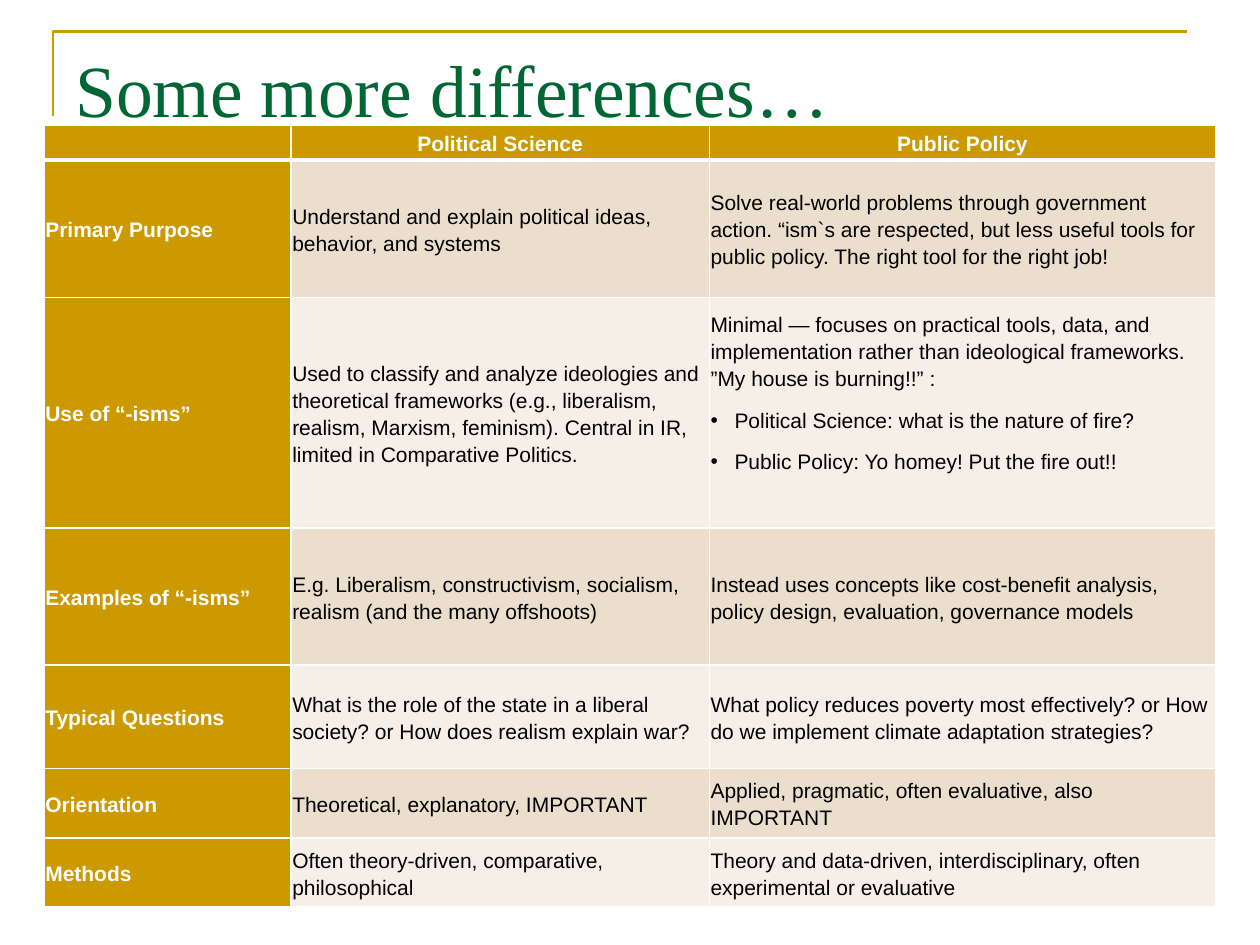
from lxml.etree import SubElement
from pptx import Presentation
from pptx.dml.color import RGBColor
from pptx.enum.text import MSO_ANCHOR, PP_ALIGN
from pptx.oxml.ns import qn
from pptx.util import Inches, Pt

GOLD = RGBColor(0xCC, 0x99, 0x00)
GREEN = RGBColor(0x00, 0x66, 0x33)
SAND = RGBColor(0xEC, 0xDE, 0xCC)
CREAM = RGBColor(0xF6, 0xEF, 0xE7)
WHITE = RGBColor(0xFF, 0xFF, 0xFF)
BLACK = RGBColor(0x00, 0x00, 0x00)

COLS = [1.96, 3.32, 4.02]
ROWS = [0.28, 1.09, 1.83, 1.09, 0.82, 0.55, 0.55]
PAD = 0.01
BULLET = "• "
DATA = [
    ["", "Political Science", "Public Policy"],
    ["Primary Purpose",
     "Understand and explain political ideas, behavior, and systems",
     "Solve real-world problems through government action. “ism`s are respected, "
     "but less useful tools for public policy. The right tool for the right job!"],
    ["Use of “-isms”",
     "Used to classify and analyze ideologies and theoretical frameworks "
     "(e.g., liberalism, realism, Marxism, feminism). Central in IR, "
     "limited in Comparative Politics.",
     "Minimal — focuses on practical tools, data, and implementation rather than "
     "ideological frameworks. ”My house is burning!!” :\n"
     "• Political Science: what is the nature of fire?\n"
     "• Public Policy: Yo homey! Put the fire out!!"],
    ["Examples of “-isms”",
     "E.g. Liberalism, constructivism, socialism, realism (and the many offshoots)",
     "Instead uses concepts like cost-benefit analysis, policy design, evaluation, "
     "governance models"],
    ["Typical Questions",
     "What is the role of the state in a liberal society? or How does realism "
     "explain war?",
     "What policy reduces poverty most effectively? or How do we implement climate "
     "adaptation strategies?"],
    ["Orientation",
     "Theoretical, explanatory, IMPORTANT",
     "Applied, pragmatic, often evaluative, also IMPORTANT"],
    ["Methods",
     "Often theory-driven, comparative, philosophical",
     "Theory and data-driven, interdisciplinary, often experimental or evaluative"],
]


def add_run(para, text, face, size, color, bold=False):
    """Add one styled run to a paragraph."""
    run = para.add_run()
    run.text = text
    font = run.font
    font.name, font.size, font.bold = face, Pt(size), bold
    font.color.rgb = color


def add_frame(slide, left, top, width, height):
    """Draw the gold corner rule along the left and top of the box."""
    x, y = Inches(left), Inches(top)
    path = slide.shapes.build_freeform(x, y + Inches(height), scale=1.0)
    path.add_line_segments([(x, y), (x + Inches(width), y)], close=False)
    shape = path.convert_to_shape()
    shape.shadow.inherit = False
    shape.fill.background()
    shape.line.color.rgb = GOLD
    shape.line.width = Pt(1.5)


def add_title(slide, left, top, width, height):
    """Place the slide title in the box."""
    box = slide.shapes.add_textbox(
        Inches(left), Inches(top), Inches(width), Inches(height))
    frame = box.text_frame
    frame.word_wrap = True
    frame.vertical_anchor = MSO_ANCHOR.TOP
    frame.margin_top = Inches(0.05)
    add_run(frame.paragraphs[0], "Some more differences…",
            "Times New Roman", 42, GREEN)


def add_edges(cell, widths):
    """Give a cell white borders, one width for each side."""
    props = cell._tc.get_or_add_tcPr()
    for side, width in widths.items():
        line = SubElement(props, qn(f"a:ln{side}"), w=str(Pt(width)))
        fill = SubElement(line, qn("a:solidFill"))
        SubElement(fill, qn("a:srgbClr"), val=str(WHITE))


def add_bullet(para):
    """Turn a paragraph into a bullet with a hanging indent."""
    props = para._p.get_or_add_pPr()
    props.set("marL", str(Inches(0.19)))
    props.set("indent", str(-Inches(0.19)))
    SubElement(props, qn("a:buFont"), typeface="Arial")
    SubElement(props, qn("a:buChar"), char=BULLET.strip())


def fill_cell(cell, text, row, col):
    """Style one cell by its place and write its paragraphs."""
    head = row == 0 or col == 0
    add_edges(cell, {"L": 1, "R": 1, "T": 3 if row == 1 else 1,
                     "B": 3 if row == 0 else 1})
    cell.fill.solid()
    cell.fill.fore_color.rgb = GOLD if head else SAND if row % 2 else CREAM
    cell.vertical_anchor = MSO_ANCHOR.MIDDLE
    cell.margin_left = cell.margin_right = Inches(PAD)
    cell.margin_top = Inches(PAD)
    cell.margin_bottom = Inches(0.34 if BULLET in text else PAD)
    frame = cell.text_frame
    for i, part in enumerate(text.split("\n")):
        para = frame.add_paragraph() if i else frame.paragraphs[0]
        para.alignment = PP_ALIGN.LEFT if row else PP_ALIGN.CENTER
        para.line_spacing = 1.15
        para.space_after = Pt(8)
        if part.startswith(BULLET):
            add_bullet(para)
        if part:
            add_run(para, part.removeprefix(BULLET), "Arial", 12,
                    WHITE if head else BLACK, head)
        else:
            SubElement(para._p, qn("a:endParaRPr"), sz="1200")


def add_grid(slide, left, top, width, height):
    """Build the comparison table in the box."""
    table = slide.shapes.add_table(
        len(ROWS), len(COLS), Inches(left), Inches(top),
        Inches(width), Inches(height)).table
    table.horz_banding = False
    for col, size in zip(table.columns, COLS):
        col.width = Inches(size)
    for row, size in zip(table.rows, ROWS):
        row.height = Inches(size)
    for r, texts in enumerate(DATA):
        for c, text in enumerate(texts):
            fill_cell(table.cell(r, c), text, r, c)


def main():
    """Build the slide and save it."""
    deck = Presentation()
    deck.slide_width, deck.slide_height = Inches(10), Inches(7.5)
    slide = deck.slides.add_slide(deck.slide_layouts[6])
    add_frame(slide, 0.42, 0.25, 9, 0.67)
    add_title(slide, 0.5, 0.3, 9, 1.25)
    add_grid(slide, 0.35, 0.99, sum(COLS), sum(ROWS))
    deck.save("out.pptx")


if __name__ == "__main__":
    main()
